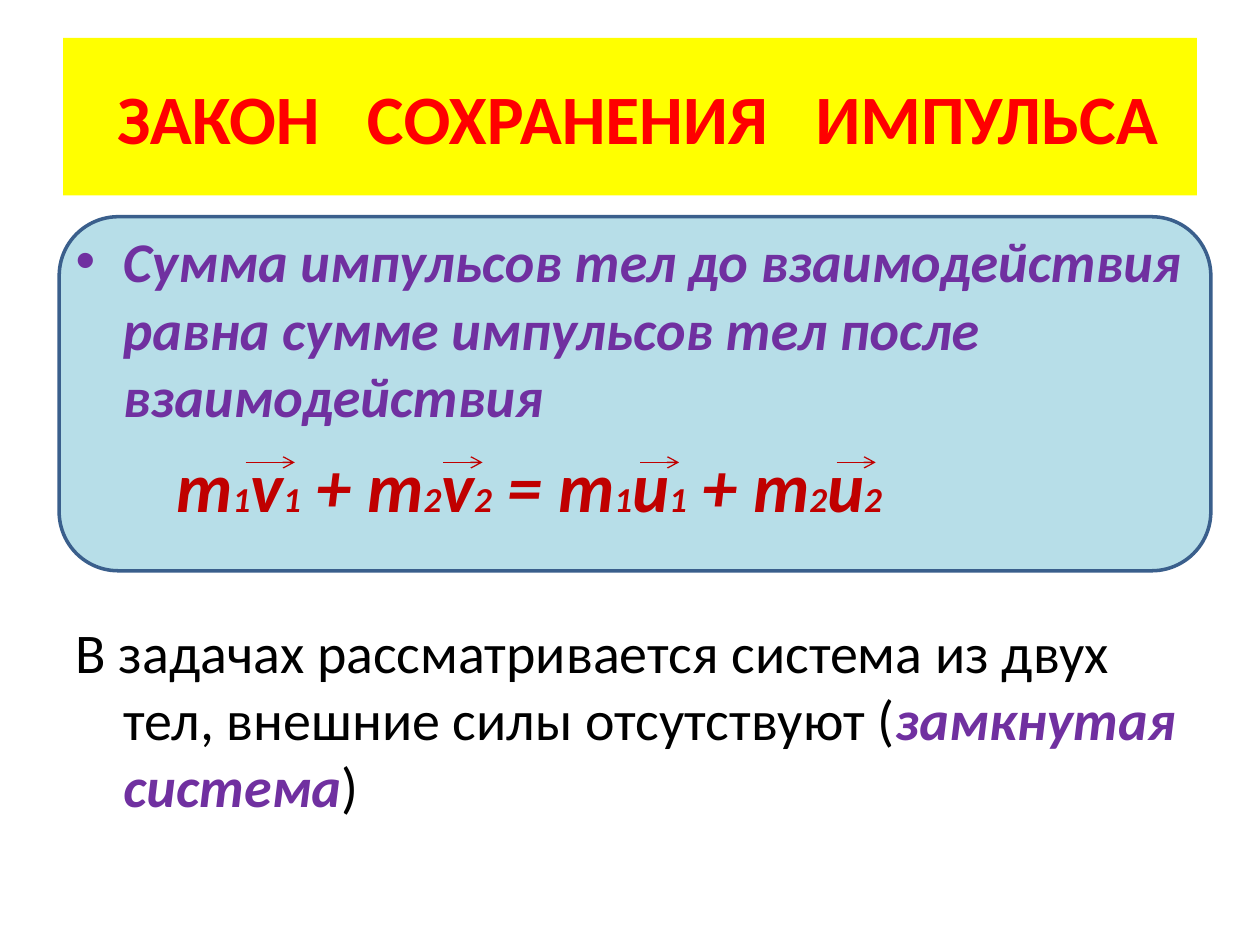
"""Build a slide on the law of conservation of momentum."""
from lxml import etree
from pptx import Presentation
from pptx.dml.color import RGBColor
from pptx.enum.shapes import MSO_CONNECTOR, MSO_SHAPE
from pptx.enum.text import MSO_AUTO_SIZE
from pptx.oxml.ns import qn
from pptx.util import Inches, Pt

ROUND = MSO_SHAPE.ROUNDED_RECTANGLE
LINE = MSO_CONNECTOR.STRAIGHT
FIXED = MSO_AUTO_SIZE.NONE
PURPLE, RED, BLACK = "7030A0", "C00000", "000000"


def paint(part, color):
    part.rgb = RGBColor.from_string(color)


def add_run(para, text, size, color, bold=True, slant=True):
    run = para.add_run()
    run.text = text
    font = run.font
    font.name, font.size = "Calibri", Pt(size)
    font.bold, font.italic = bold, slant
    paint(font.color, color)
    return run


deck = Presentation()
deck.slide_width, deck.slide_height = Inches(10), Inches(7.5)
slide = deck.slides.add_slide(deck.slide_layouts[1])
shapes = slide.shapes
title, body = shapes.title, slide.placeholders[1]

panel = shapes.add_shape(ROUND, Inches(0.47), Inches(1.72), Inches(9.14), Inches(2.81))
panel.shadow.inherit = False
panel.fill.solid()
paint(panel.fill.fore_color, "B7DEE8")
paint(panel.line.color, "3A5F8C")
panel.line.width = Pt(2)
title._element.addprevious(panel._element)

title.left, title.top = Inches(0.5), Inches(0.3)
title.width, title.height = Inches(9), Inches(1.25)
title.fill.solid()
paint(title.fill.fore_color, "FFFF00")
frame = title.text_frame
frame.auto_size = FIXED
frame.margin_left = Inches(0.22)
head = frame.paragraphs[0]
for i, word in enumerate(["ЗАКОН", "СОХРАНЕНИЯ", "ИМПУЛЬСА"]):
    if i:
        gap = add_run(head, " ", 39.6, "FF0000", slant=False)
        gap.font._element.set("spc", "1800")
    add_run(head, word, 39.6, "FF0000", slant=False)

body.left, body.top = Inches(0.5), Inches(1.75)
body.width, body.height = Inches(9), Inches(4.95)
frame = body.text_frame
frame.auto_size = FIXED
law = frame.paragraphs[0]
add_run(law, "Сумма импульсов тел до взаимодействия равна сумме импульсов тел после взаимодействия", 32, PURPLE)

sums = frame.add_paragraph()
for text, sub in [("m", "1"), ("v", "1"), (" + m", "2"), ("v", "2"),
                  (" = m", "1"), ("u", "1"), (" + m", "2"), ("u", "2")]:
    add_run(sums, text, 40, RED)
    add_run(sums, sub, 20, RED)

note = frame.add_paragraph()
note.space_before = Pt(52)
add_run(note, "В задачах рассматривается система из двух тел, внешние силы отсутствуют (", 32, BLACK, False, False)
add_run(note, "замкнутая система", 32, PURPLE)
add_run(note, ")", 32, BLACK, False, False)

for para, left, indent in [(sums, 0.8, 0), (note, 0.38, -0.38)]:
    props = para._p.get_or_add_pPr()
    props.set("marL", str(Inches(left)))
    props.set("indent", str(Inches(indent)))
    etree.SubElement(props, qn("a:buNone"))

for start, end in [(1.95, 2.34), (3.52, 3.83), (5.08, 5.39), (6.64, 6.95)]:
    arrow = shapes.add_connector(LINE, Inches(start), Inches(3.67), Inches(end), Inches(3.67))
    paint(arrow.line.color, RED)
    arrow.line.width = Pt(0.75)
    etree.SubElement(arrow.line._get_or_add_ln(), qn("a:tailEnd"), type="arrow")
    etree.SubElement(arrow._element.spPr, qn("a:effectLst"))

deck.save("out.pptx")
